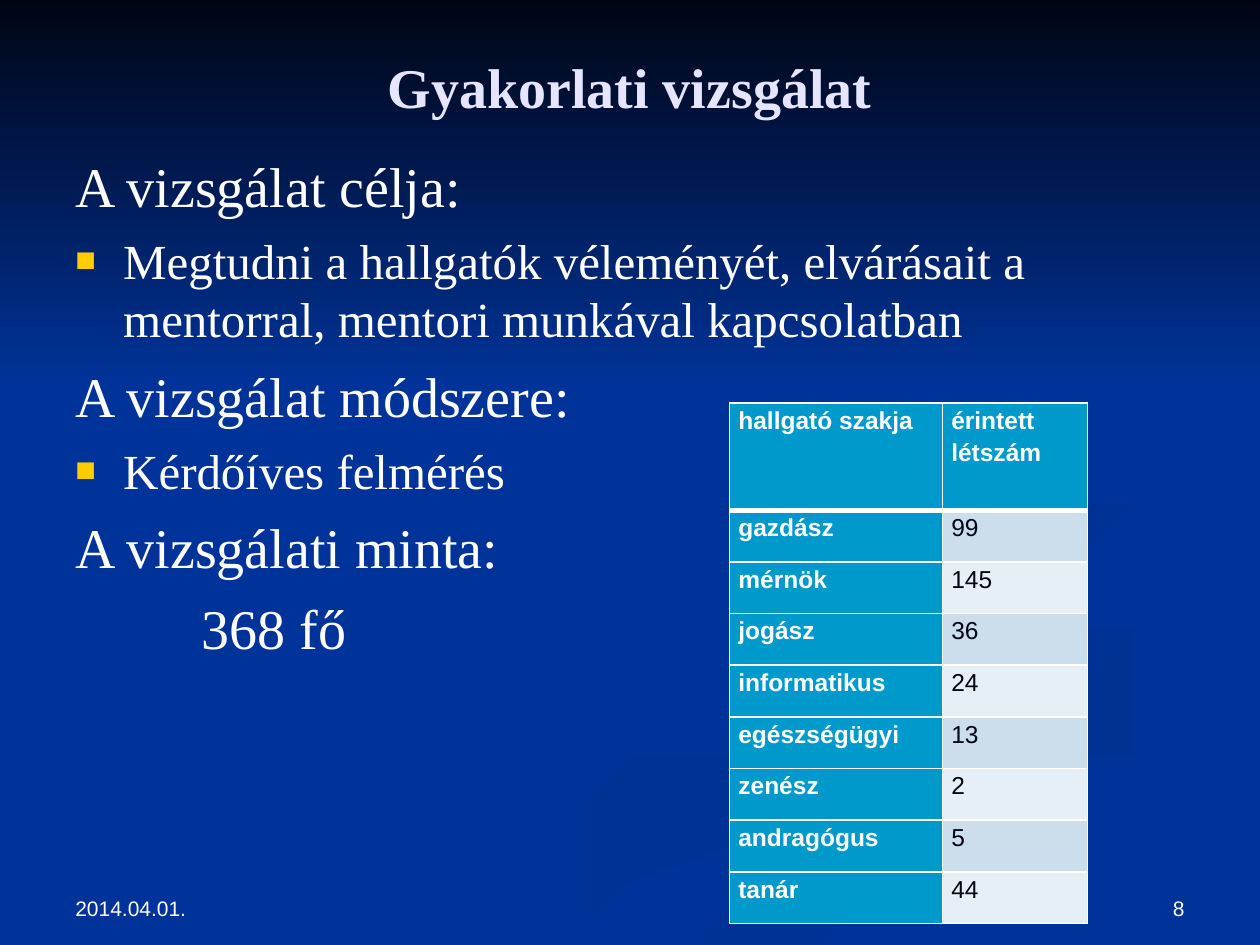
from lxml.etree import SubElement
from pptx import Presentation
from pptx.dml.color import RGBColor
from pptx.enum.shapes import MSO_SHAPE as Preset
from pptx.enum.text import MSO_ANCHOR as Anchor, PP_ALIGN as Align
from pptx.oxml.ns import qn
from pptx.util import Inches, Pt

SERIF, SANS = "Times New Roman", "Arial"
WHITE, BLUE, CYAN, NIGHT = "FFFFFF", "003399", "0099CC", "000514"

WAVES = [
    ([(7.8, 5.5), (6, 4.9), (5.75, 4.6), (6, 4.9), (7.6, 5.5), (7.8, 5.8), (5.4, 6.5),
      (3, 7.5), (3.6, 7.5), (5, 6.9), (7.8, 6), (8, 5.8)], (BLUE, "003193"), 0),
    ([(9.43, 5.7), (9.2, 5.47), (7.6, 5), (7.24, 4.64), (7.55, 5.05), (8.7, 5.44),
      (9.1, 5.66), (9.18, 5.8), (8.94, 6.05), (9.35, 5.88)], (BLUE, "003193"), 45),
    ([(5.03, 7.5), (5.7, 7.5), (6.7, 7), (8.2, 6.5), (10, 6.1), (10, 5.8), (8, 6.38),
      (6.3, 6.93)], ("002F8C", BLUE), 90),
    ([(7.81, 4.6), (7.9, 4.78), (8.26, 4.96), (8.05, 4.72), (8.6, 4.43), (10, 4.2),
      (10, 4), (8.35, 4.3)], ("003091", BLUE), 45),
    ([(6.8, 4.3), (8.4, 4), (8.9, 3.6), (8.9, 3.2), (8.4, 2.75), (7.62, 2.33), (8.7, 3),
      (8.85, 3.5), (8.2, 3.85), (6.2, 4.28), (5.77, 4.62), (6.2, 5), (5.94, 4.7)],
     ("002F8E", BLUE), 45),
]

GOALS = [
    ("A vizsgálat célja:", 32, 0, False),
    ("Megtudni a hallgatók véleményét, elvárásait a mentorral, mentori munkával kapcsolatban",
     28, 0.38, True),
    ("A vizsgálat módszere:", 32, 0, False),
    ("Kérdőíves felmérés", 28, 0.38, True),
    ("A vizsgálati minta:", 32, 0, False),
    ("368 fő", 32, 1, False),
]

STUDENTS = [
    ("hallgató szakja", "érintett létszám"), ("gazdász", "99"), ("mérnök", "145"),
    ("jogász", "36"), ("informatikus", "24"), ("egészségügyi", "13"), ("zenész", "2"),
    ("andragógus", "5"), ("tanár", "44"),
]


def color(value):
    return RGBColor.from_string(value)


class Builder:
    """Holds the deck style and the current page."""

    def __init__(self, deck):
        self.page = deck.slides.add_slide(deck.slide_layouts[6])
        self.page.background.fill.solid()
        self.page.background.fill.fore_color.rgb = color(BLUE)

    def style(self, para, size, font, shade=WHITE, bold=False):
        for span in para.runs:
            span.font.size, span.font.name, span.font.bold = Pt(size), font, bold
            span.font.color.rgb = color(shade)

    def blend(self, shape, shades, angle):
        shape.shadow.inherit = False
        shape.line.fill.background()
        shape.fill.gradient()
        shape.fill.gradient_angle = -angle % 360
        for stop, shade in zip(shape.fill.gradient_stops, shades):
            stop.color.rgb = color(shade)

    def wave(self, points, shades, angle):
        outline = self.page.shapes.build_freeform(*points[0], scale=Inches(1))
        outline.add_line_segments(points[1:], close=True)
        self.blend(outline.convert_to_shape(), shades, angle)

    def panel(self, place, shades, angle):
        shape = self.page.shapes.add_shape(Preset.RECTANGLE, *map(Inches, place))
        self.blend(shape, shades, angle)

    def box(self, place, text, anchor=Anchor.TOP):
        frame = self.page.shapes.add_textbox(*map(Inches, place)).text_frame
        frame.word_wrap, frame.vertical_anchor = True, anchor
        frame.text = text
        return frame

    def label(self, place, text, size, font, align, anchor, shade=WHITE, bold=False):
        para = self.box(place, text, anchor).paragraphs[0]
        para.alignment = align
        self.style(para, size, font, shade, bold)

    def outline(self, place, items):
        frame = self.box(place, "\n".join(item[0] for item in items))
        for para, (_, size, indent, bulleted) in zip(frame.paragraphs, items):
            para.space_before = Pt(size * 0.24)
            self.style(para, size, SERIF)
            props = para._p.get_or_add_pPr()
            props.set("marL", str(Inches(indent)))
            if bulleted:
                props.set("indent", str(-Inches(indent)))
                shade = SubElement(props, qn("a:buClr"))
                SubElement(shade, qn("a:srgbClr"), val="FFCC00")
                SubElement(props, qn("a:buSzPct"), val="70000")
                SubElement(props, qn("a:buFont"), typeface=SANS)
                SubElement(props, qn("a:buChar"), char="■")

    def border(self, cell, side, width):
        line = SubElement(cell._tc.get_or_add_tcPr(), qn(f"a:{side}"), w=str(Pt(width)))
        SubElement(SubElement(line, qn("a:solidFill")), qn("a:srgbClr"), val=WHITE)

    def cell(self, cell, text, fill, shade, bold, top, bottom):
        cell.text = text
        cell.margin_left = cell.margin_right = Inches(0.07)
        cell.margin_top = cell.margin_bottom = 0
        para = cell.text_frame.paragraphs[0]
        para.line_spacing = 1.15
        self.style(para, 14, SANS, shade, bold)
        for side, width in (("lnL", 1), ("lnR", 1), ("lnT", top), ("lnB", bottom)):
            self.border(cell, side, width)
        cell.fill.solid()
        cell.fill.fore_color.rgb = color(fill)

    def table(self, place, rows, widths, heights):
        table = self.page.shapes.add_table(len(rows), len(widths), *map(Inches, place)).table
        for column, width in zip(table.columns, widths):
            column.width = Inches(width)
        for r, (row, height) in enumerate(zip(rows, heights)):
            table.rows[r].height = Inches(height)
            for c, text in enumerate(row):
                heading = r == 0 or c == 0
                fill = CYAN if heading else ("E7EFF6", "CCDEEC")[r % 2]
                self.cell(table.cell(r, c), text, fill, WHITE if heading else NIGHT, heading,
                          top=3 if r == 1 else 1, bottom=3 if r == 0 else 1)


def main():
    deck = Presentation()
    deck.slide_width, deck.slide_height = Inches(10), Inches(7.5)
    builder = Builder(deck)
    for points, shades, angle in WAVES:
        builder.wave(points, shades, angle)
    builder.panel((0, 0, 10, 3.08), (NIGHT, BLUE), 90)
    builder.label((0.5, 0.3, 9, 0.77), "Gyakorlati vizsgálat", 32, SERIF, Align.CENTER,
                  Anchor.MIDDLE, "E5E5FF", True)
    builder.outline((0.5, 1.15, 9, 5.55), GOALS)
    builder.label((0.5, 6.84, 2.33, 0.52), "2014.04.01.", 12, SANS, Align.LEFT, Anchor.BOTTOM)
    builder.label((7.17, 6.84, 2.33, 0.52), "8", 12, SANS, Align.RIGHT, Anchor.BOTTOM)
    builder.table((5.79, 3.2, 2.84, 4.13), STUDENTS, (1.69, 1.15), [0.85] + [0.41] * 8)
    deck.save("out.pptx")


if __name__ == "__main__":
    main()
